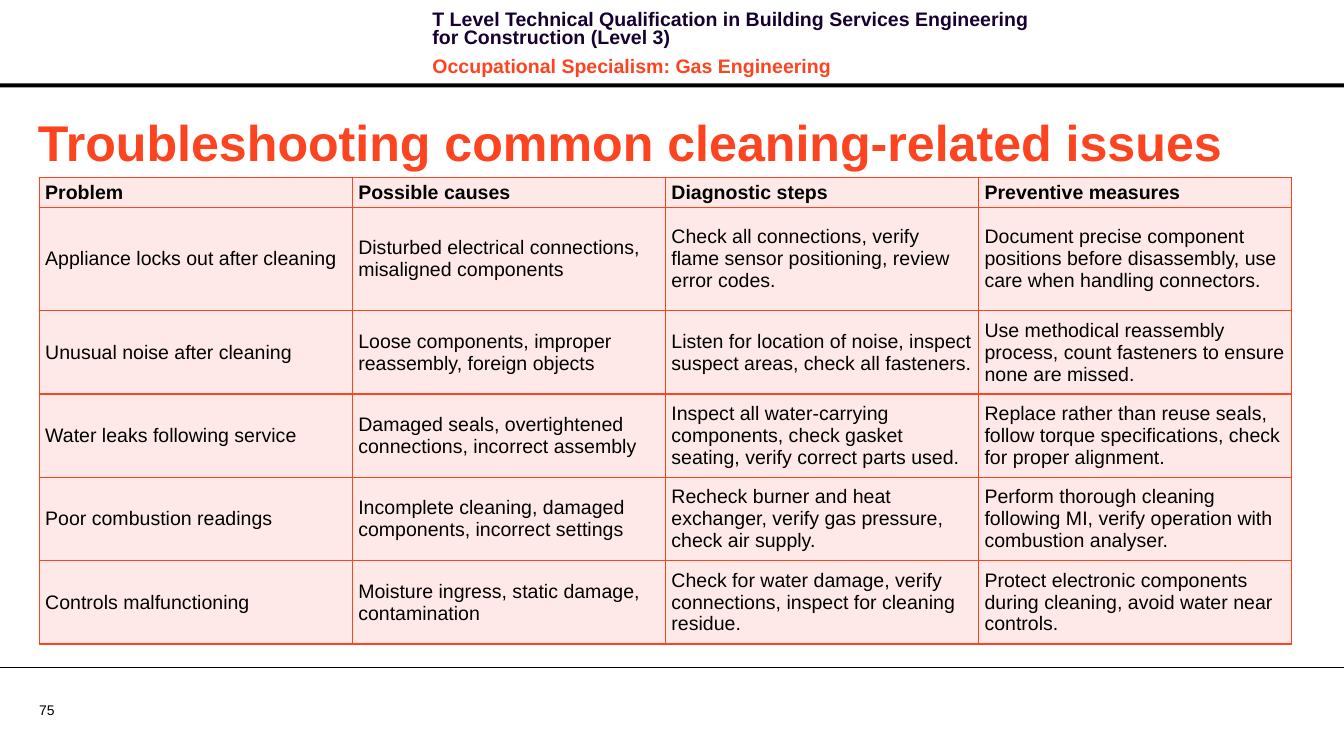
import pptx
import pptx.dml.color
import pptx.enum.shapes
import pptx.enum.text
import pptx.oxml
import pptx.oxml.ns
import pptx.util
from pptx.util import Inches

COLOURS = {
    "black": "000000",
    "navy": "170130",
    "orange": "FC4421",
    "blush": "FEE9E8",
}
FONT = "Arial"
MIDDLE = pptx.enum.text.MSO_ANCHOR.MIDDLE
TOP = pptx.enum.text.MSO_ANCHOR.TOP
SLIDE_WIDTH = 13.39
COLUMN_WIDTH = 3.12
ROW_HEIGHTS = [0.26, 1.03] + [0.83] * 4

ISSUES = [
    ("Problem", "Possible causes", "Diagnostic steps", "Preventive measures"),
    ("Appliance locks out after cleaning",
     "Disturbed electrical connections, misaligned components",
     "Check all connections, verify flame sensor positioning, review error codes.",
     "Document precise component positions before disassembly, "
     "use care when handling connectors."),
    ("Unusual noise after cleaning",
     "Loose components, improper reassembly, foreign objects",
     "Listen for location of noise, inspect suspect areas, check all fasteners.",
     "Use methodical reassembly process, count fasteners to ensure none are missed."),
    ("Water leaks following service",
     "Damaged seals, overtightened connections, incorrect assembly",
     "Inspect all water-carrying components, check gasket seating, "
     "verify correct parts used.",
     "Replace rather than reuse seals, follow torque specifications, "
     "check for proper alignment."),
    ("Poor combustion readings",
     "Incomplete cleaning, damaged components, incorrect settings",
     "Recheck burner and heat exchanger, verify gas pressure, check air supply.",
     "Perform thorough cleaning following MI, verify operation with "
     "combustion analyser."),
    ("Controls malfunctioning",
     "Moisture ingress, static damage, contamination",
     "Check for water damage, verify connections, inspect for cleaning residue.",
     "Protect electronic components during cleaning, avoid water near controls."),
]


def colour(name):
    return pptx.dml.color.RGBColor.from_string(COLOURS[name])


def style_para(para, size, colour_name, bold=False):
    for span in para.runs:
        span.font.name = FONT
        span.font.size = pptx.util.Pt(size)
        span.font.bold = bold
        span.font.color.rgb = colour(colour_name)


def set_margins(holder, across, down):
    holder.margin_left = holder.margin_right = Inches(across)
    holder.margin_top = holder.margin_bottom = Inches(down)


def add_text(page, bounds, text, anchor, margins=(0.1, 0.05)):
    box = page.shapes.add_textbox(*map(Inches, bounds))
    frame = box.text_frame
    frame.word_wrap = True
    frame.vertical_anchor = anchor
    set_margins(frame, *margins)
    frame.text = text
    return frame.paragraphs


def add_header(page):
    paras = add_text(
        page, (4.21, 0.07, 6.37, 0.64),
        "T Level Technical Qualification in Building Services Engineering "
        "for Construction (Level 3)\nOccupational Specialism: Gas Engineering", TOP)
    for para, colour_name in zip(paras, ("navy", "orange")):
        para.line_spacing = pptx.util.Pt(13.1)
        para.space_after = pptx.util.Pt(4)
        style_para(para, 14, colour_name, bold=True)
    paras[1].space_before = pptx.util.Pt(4)


def add_header_bar(page):
    bar = page.shapes.add_shape(
        pptx.enum.shapes.MSO_SHAPE.RECTANGLE,
        Inches(0), Inches(0.83), Inches(SLIDE_WIDTH), Inches(0.04))
    bar.shadow.inherit = False
    bar.fill.solid()
    bar.fill.fore_color.rgb = colour("black")
    bar.line.fill.background()


def add_footer_rule(page):
    rule = page.shapes.add_connector(
        pptx.enum.shapes.MSO_CONNECTOR.STRAIGHT,
        Inches(0), Inches(6.65), Inches(SLIDE_WIDTH), Inches(6.65))
    rule.line.color.rgb = colour("black")
    rule.line.width = pptx.util.Pt(0.75)
    properties = rule._element.spPr
    properties.append(pptx.oxml.parse_xml(
        f'<a:effectLst {pptx.oxml.ns.nsdecls("a")}/>'))


def add_cell_borders(cell):
    """Insert the four border lines ahead of the cell's fill."""
    properties = cell._tc.get_or_add_tcPr()
    for index, side in enumerate(("lnL", "lnR", "lnT", "lnB")):
        properties.insert(index, pptx.oxml.parse_xml(
            f'<a:{side} {pptx.oxml.ns.nsdecls("a")} w="{pptx.util.Pt(1)}">'
            f'<a:solidFill><a:srgbClr val="{COLOURS["orange"]}"/></a:solidFill>'
            f'</a:{side}>'))


def fill_cell(cell, text, bold):
    cell.text = text
    cell.vertical_anchor = MIDDLE
    set_margins(cell, 0.06, 0.03)
    cell.fill.solid()
    cell.fill.fore_color.rgb = colour("blush")
    add_cell_borders(cell)
    style_para(cell.text_frame.paragraphs[0], 14, "black", bold)


def add_issue_table(page):
    column_count = len(ISSUES[0])
    table = page.shapes.add_table(
        len(ISSUES), column_count, Inches(0.39), Inches(1.77),
        Inches(COLUMN_WIDTH * column_count), Inches(sum(ROW_HEIGHTS))).table
    table.horz_banding = False
    for column in table.columns:
        column.width = Inches(COLUMN_WIDTH)
    for row_index, (texts, height) in enumerate(zip(ISSUES, ROW_HEIGHTS)):
        table.rows[row_index].height = Inches(height)
        for column_index, text in enumerate(texts):
            fill_cell(table.cell(row_index, column_index), text, row_index == 0)


def main():
    deck = pptx.Presentation()
    deck.slide_width = Inches(SLIDE_WIDTH)
    deck.slide_height = Inches(7.48)
    page = deck.slides.add_slide(deck.slide_layouts[6])

    add_header_bar(page)
    number = add_text(page, (0.39, 6.99, 0.64, 0.17), "75", MIDDLE, (0, 0))
    style_para(number[0], 10, "black")
    add_footer_rule(page)
    add_header(page)
    title = add_text(page, (0.28, 1.05, 12.72, 0.71),
                     "Troubleshooting common cleaning-related issues", MIDDLE)
    style_para(title[0], 36, "orange", bold=True)
    add_issue_table(page)
    deck.save("out.pptx")


if __name__ == "__main__":
    main()
